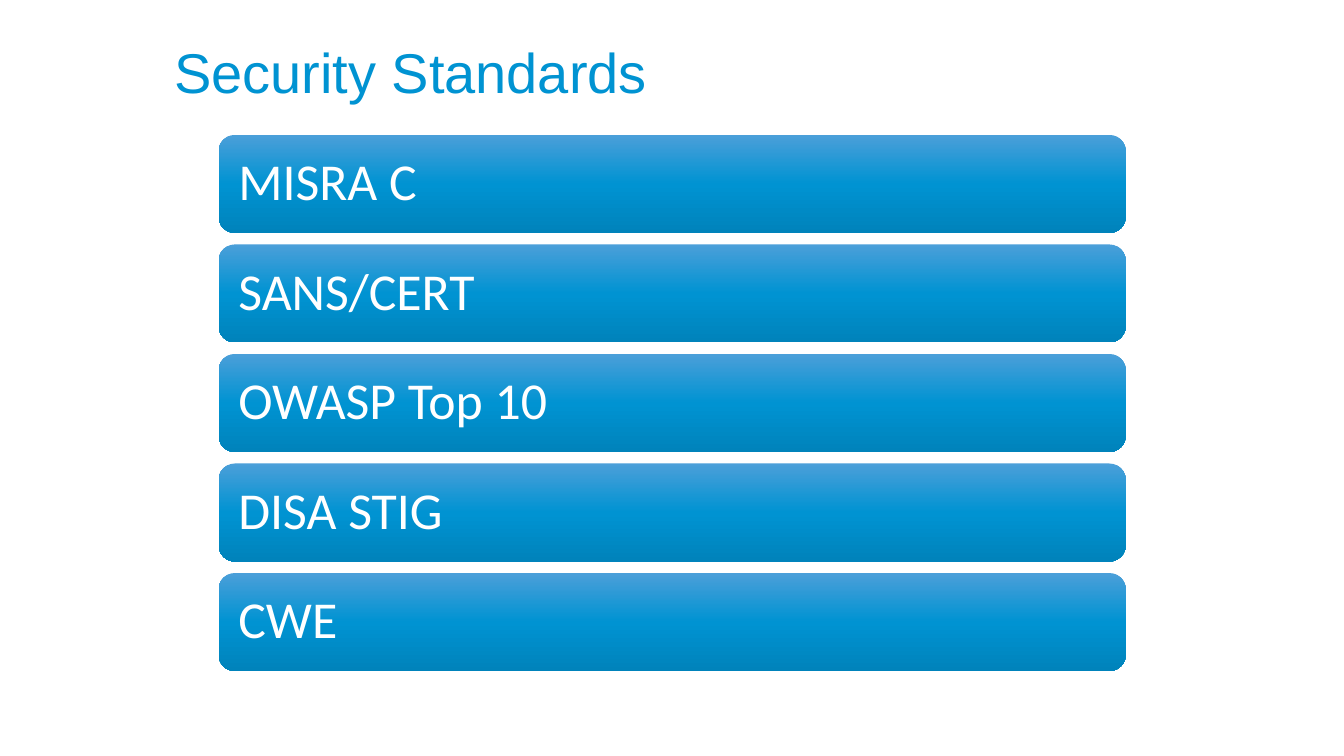
from copy import deepcopy

from pptx import Presentation
from pptx.dml.color import RGBColor
from pptx.enum.shapes import MSO_SHAPE
from pptx.enum.text import MSO_ANCHOR, PP_ALIGN
from pptx.oxml.ns import qn
from pptx.util import Cm, Pt

TITLE = "Security Standards"
STANDARDS = ["MISRA C", "SANS/CERT", "OWASP Top 10", "DISA STIG", "CWE"]
COLORS = {"light": "4B9FD9", "blue": "0093D2", "dark": "0083BB", "white": "FFFFFF"}
GRADIENT = [(0, "light"), (0.5, "blue"), (1, "dark")]
BAR_LEFT, BAR_TOP, BAR_WIDTH, BAR_HEIGHT, BAR_PITCH = 5.51, 3.4, 22.86, 2.47, 2.76
BAR_INSET = 0.38


def color(name):
    return RGBColor.from_string(COLORS[name])


def write(frame, text, font, size, color_name):
    frame.word_wrap = True
    paragraph = frame.paragraphs[0]
    paragraph.alignment = PP_ALIGN.LEFT
    paragraph.line_spacing = 0.9
    run = paragraph.add_run()
    run.text = text
    run.font.name = font
    run.font.size = Pt(size)
    run.font.color.rgb = color(color_name)


def fill_gradient(shape):
    shape.fill.gradient()
    shape.fill.gradient_angle = 270
    stop_list = shape.element.spPr.find(qn("a:gradFill")).find(qn("a:gsLst"))
    stop_list.append(deepcopy(stop_list[0]))
    for stop, (position, name) in zip(shape.fill.gradient_stops, GRADIENT):
        stop.position = position
        stop.color.rgb = color(name)


def add_bar(slide, index, text):
    shape = slide.shapes.add_shape(
        MSO_SHAPE.ROUNDED_RECTANGLE, Cm(BAR_LEFT), Cm(BAR_TOP + index * BAR_PITCH),
        Cm(BAR_WIDTH), Cm(BAR_HEIGHT))
    shape.shadow.inherit = False
    shape.line.fill.background()
    fill_gradient(shape)
    frame = shape.text_frame
    frame.vertical_anchor = MSO_ANCHOR.MIDDLE
    frame.margin_left = frame.margin_right = Cm(BAR_INSET)
    frame.margin_top = frame.margin_bottom = Cm(BAR_INSET)
    write(frame, text, "Calibri", 37, "white")


def main():
    presentation = Presentation()
    presentation.slide_width, presentation.slide_height = Cm(33.87), Cm(19.05)
    slide = presentation.slides.add_slide(presentation.slide_layouts[6])
    title = slide.shapes.add_textbox(Cm(4.14), Cm(1.02), Cm(29.21), Cm(3.68))
    write(title.text_frame, TITLE, "Arial", 40, "blue")
    for index, standard in enumerate(STANDARDS):
        add_bar(slide, index, standard)
    presentation.save("out.pptx")


if __name__ == "__main__":
    main()
